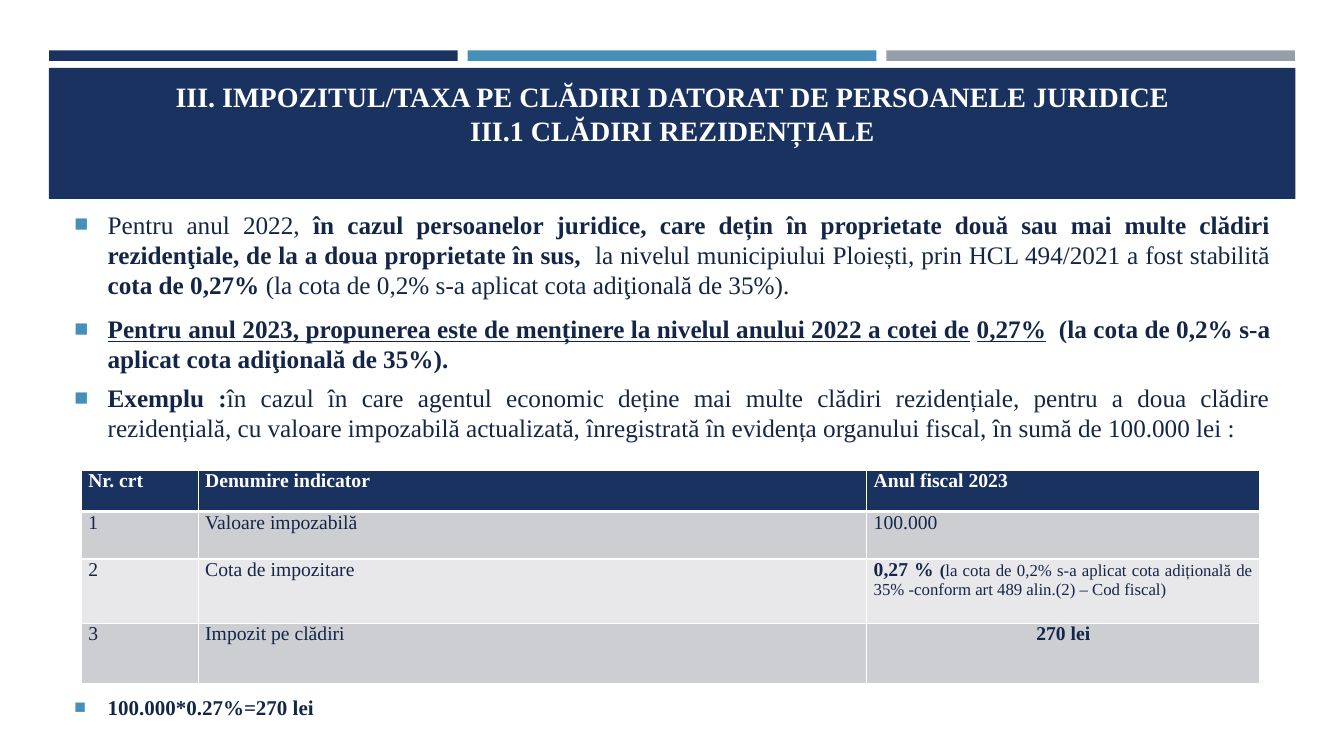
"""Build the slide on the building tax owed by legal persons."""
from dataclasses import dataclass

from lxml import etree
from pptx import Presentation
from pptx import util as u
from pptx.dml.color import RGBColor
from pptx.enum import shapes, text
from pptx.oxml.ns import qn

COLOURS = {
    "navy": "1A3260", "blue": "4590B8", "grey": "969FA7", "ink": "142648",
    "white": "FFFFFF", "band": "CDCED2", "light": "E8E8EA",
}
FONT = "Times New Roman"
WIDTH, HEIGHT = u.Inches(13.33), u.Inches(7.5)
JUSTIFY, CENTER = text.PP_ALIGN.JUSTIFY, text.PP_ALIGN.CENTER


@dataclass
class Area:
    """A rectangle in percent of the slide's width and height."""
    left: float
    top: float
    width: float
    height: float

    def lengths(self) -> tuple:
        """Return left, top, width and height as lengths."""
        return across(self.left), down(self.top), across(self.width), down(self.height)


@dataclass
class Span:
    """A stretch of text in one format."""
    words: str
    bold: bool = False
    underline: bool = False
    size: float = 18


@dataclass
class Item:
    """A bulleted paragraph with its spacing in points."""
    spans: list
    before: float = 0
    after: float = 0


@dataclass
class Row:
    """A table row: height in percent, fill, font colour and cells of spans."""
    height: float
    fill: str
    colour: str
    cells: list
    align_last: text.PP_ALIGN = JUSTIFY
    rule: float = 1


def across(percent: float) -> int:
    """Return a share of the slide's width."""
    return round(WIDTH * percent / 100)


def down(percent: float) -> int:
    """Return a share of the slide's height."""
    return round(HEIGHT * percent / 100)


def rgb(name: str) -> RGBColor:
    """Look up a named colour."""
    return RGBColor.from_string(COLOURS[name])


def write(para, words: str, *, size: float = 18, colour: str = "ink",
          bold: bool = False, underline: bool = False) -> None:
    """Add a formatted run to a paragraph."""
    run = para.add_run()
    run.text = words
    run.font.name, run.font.size = FONT, u.Pt(size)
    run.font.bold, run.font.underline = bold, underline
    run.font.color.rgb = rgb(colour)


def write_spans(para, spans: list, colour: str = "ink") -> None:
    """Write every span of a paragraph."""
    for span in spans:
        write(para, span.words, size=span.size, colour=colour,
              bold=span.bold, underline=span.underline)


def add_bar(page, area: Area, colour: str) -> None:
    """Draw a plain filled rectangle."""
    bar = page.shapes.add_shape(shapes.MSO_SHAPE.RECTANGLE, *area.lengths())
    bar.shadow.inherit = False
    bar.fill.solid()
    bar.fill.fore_color.rgb = rgb(colour)
    bar.line.fill.background()


def add_frame(page, area: Area):
    """Add a wrapping text box and return its text frame."""
    frame = page.shapes.add_textbox(*area.lengths()).text_frame
    frame.word_wrap = True
    return frame


def add_title(page, area: Area, lines: list) -> None:
    """Write the centred title, one line break between its lines."""
    para = add_frame(page, area).paragraphs[0]
    para.alignment = CENTER
    for index, line in enumerate(lines):
        if index:
            para.add_line_break()
        write(para, line, size=20, colour="white", bold=True)


def add_bullet(para) -> None:
    """Give a paragraph a hanging square bullet."""
    properties = para._p.get_or_add_pPr()
    indent = u.Inches(0.33)
    properties.set("marL", str(indent))
    properties.set("indent", str(-indent))
    colour = etree.SubElement(properties, qn("a:buClr"))
    etree.SubElement(colour, qn("a:srgbClr"), val=COLOURS["blue"])
    etree.SubElement(properties, qn("a:buSzPct"), val="92000")
    etree.SubElement(properties, qn("a:buFont"), typeface=FONT)
    etree.SubElement(properties, qn("a:buChar"), char="■")


def add_list(page, area: Area, items: list) -> None:
    """Write a bulleted list into a text box."""
    frame = add_frame(page, area)
    for index, item in enumerate(items):
        para = frame.add_paragraph() if index else frame.paragraphs[0]
        para.alignment = JUSTIFY
        para.space_before, para.space_after = u.Pt(item.before), u.Pt(item.after)
        add_bullet(para)
        write_spans(para, item.spans)


def add_borders(cell, top: float, bottom: float) -> None:
    """Draw white borders around a cell, widths in points."""
    properties = cell._tc.get_or_add_tcPr()
    edges = {"a:lnL": 1, "a:lnR": 1, "a:lnT": top, "a:lnB": bottom}
    for index, (edge, points) in enumerate(edges.items()):
        line = etree.Element(qn(edge), w=str(u.Pt(points)))
        fill = etree.SubElement(line, qn("a:solidFill"))
        etree.SubElement(fill, qn("a:srgbClr"), val=COLOURS["white"])
        properties.insert(index, line)


def add_grid(page, area: Area, widths: list, rows: list) -> None:
    """Add the table of indicators."""
    table = page.shapes.add_table(len(rows), len(widths), *area.lengths()).table
    table.horz_banding = False
    for column, width in zip(table.columns, widths):
        column.width = across(width)
    top = 1
    for index, row in enumerate(rows):
        table.rows[index].height = down(row.height)
        for number, spans in enumerate(row.cells):
            cell = table.cell(index, number)
            cell.margin_left = cell.margin_right = u.Inches(0.07)
            cell.margin_top = cell.margin_bottom = 0
            cell.fill.solid()
            cell.fill.fore_color.rgb = rgb(row.fill)
            add_borders(cell, top, row.rule)
            para = cell.text_frame.paragraphs[0]
            para.alignment = row.align_last if spans is row.cells[-1] else JUSTIFY
            write_spans(para, spans, row.colour)
        top = row.rule


def label(words: str, bold: bool = False) -> list:
    """Return the single span of a plain table cell."""
    return [Span(words, bold, size=14)]


TITLE = ["III. IMPOZITUL/TAXA PE CLĂDIRI DATORAT DE PERSOANELE JURIDICE",
         "III.1 CLĂDIRI REZIDENȚIALE"]
ITEMS = [
    Item([Span("Pentru anul 2022, "),
          Span("în cazul persoanelor juridice, care dețin în proprietate două sau mai multe "
               "clădiri rezidenţiale, de la a doua proprietate în sus,  ", True),
          Span("la nivelul municipiului Ploiești, prin HCL 494/2021 a fost stabilită "),
          Span("cota de 0,27% ", True),
          Span("(la cota de 0,2% s-a aplicat cota adiţională de 35%).")], 3.6, 6),
    Item([Span("Pentru anul 2023, propunerea este de menținere la nivelul anului 2022 a cotei de",
               True, True),
          Span(" ", True), Span("0,27%", True, True),
          Span("  (la cota de 0,2% s-a aplicat cota adiţională de 35%).", True)], 3.6, 6),
    Item([Span("Exemplu :", True),
          Span("în cazul în care agentul economic deține mai multe clădiri rezidențiale, pentru "
               "a doua clădire rezidențială, cu valoare impozabilă actualizată, înregistrată în "
               "evidența organului fiscal, în sumă de 100.000 lei :")]),
]
RESULT = [Item([Span("100.000*0.27%=270 lei", True, size=15)])]
RATE = [Span("0,27 % ", True, size=14), Span("(", True, size=12),
        Span("la cota de 0,2% s-a aplicat cota adițională de 35% -conform art 489 alin.(2) "
             "– Cod fiscal)", size=12)]
ROWS = [
    Row(5.47, "navy", "white", [label("Nr. crt", True), label("Denumire indicator", True),
                                label("Anul fiscal 2023", True)], rule=3),
    Row(6.27, "band", "ink", [label("1"), label("Valoare impozabilă"), label("100.000")]),
    Row(8.53, "light", "ink", [label("2"), label("Cota de impozitare"), RATE]),
    Row(8, "band", "ink", [label("3"), label("Impozit pe clădiri"), label("270 lei", True)], CENTER),
]


def main() -> None:
    """Build and save the deck."""
    deck = Presentation()
    deck.slide_width, deck.slide_height = WIDTH, HEIGHT
    page = deck.slides.add_slide(deck.slide_layouts[6])
    for index, colour in enumerate(["navy", "blue", "grey"]):
        add_bar(page, Area(3.65 + 31.15 * index, 6.67, 30.4, 1.4), colour)
    add_bar(page, Area(3.63, 8.97, 92.75, 17.35), "navy")
    add_title(page, Area(4.8, 9.87, 90.47, 14.8), TITLE)
    add_list(page, Area(4.8, 27, 90.47, 33.5), ITEMS)
    add_grid(page, Area(6.05, 62.2, 87.7, 28.27), [8.7, 49.74, 29.26], ROWS)
    add_list(page, Area(4.8, 91.2, 90.47, 5.3), RESULT)
    deck.save("out.pptx")


if __name__ == "__main__":
    main()
